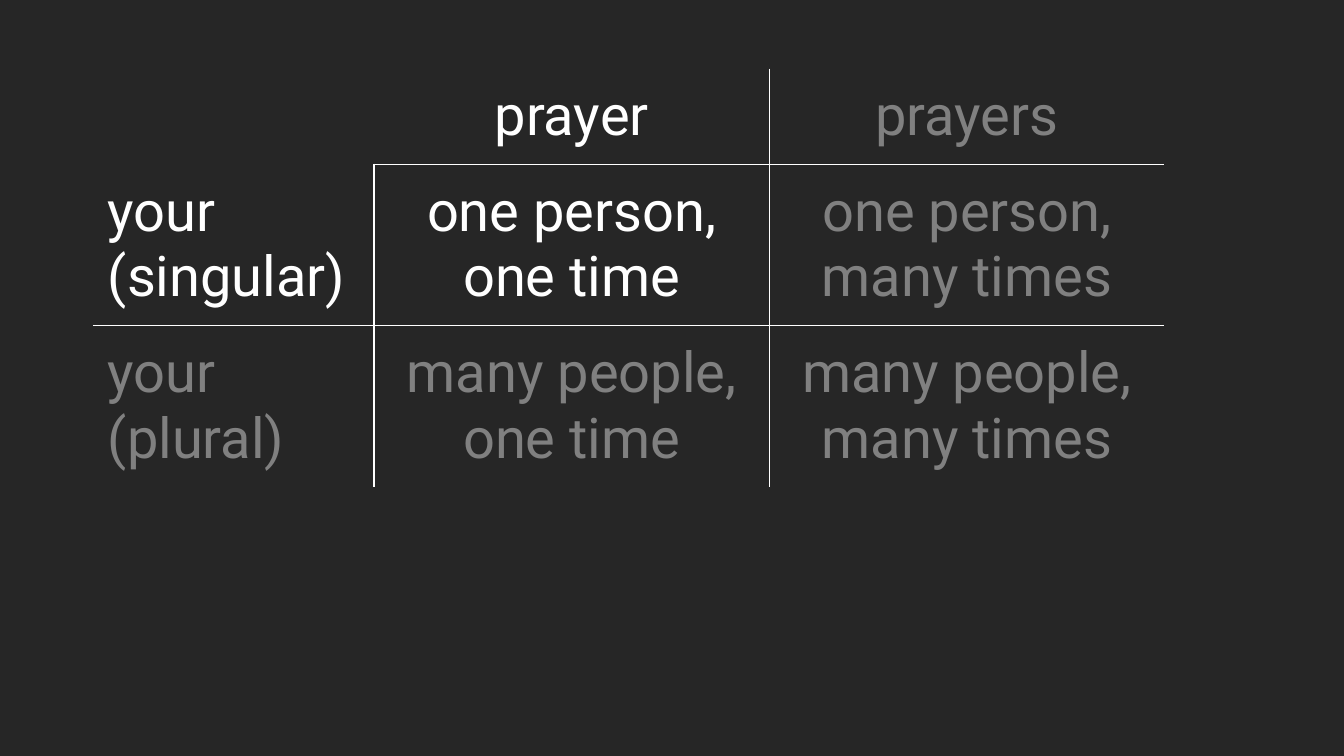
from dataclasses import dataclass

from lxml import etree
from pptx import Presentation
from pptx.dml.color import RGBColor
from pptx.enum.text import MSO_ANCHOR, PP_ALIGN
from pptx.oxml.ns import qn
from pptx.util import Inches, Pt

LEFT, CENTER = PP_ALIGN.LEFT, PP_ALIGN.CENTER
TOP = MSO_ANCHOR.TOP
DARK, WHITE, GRAY = "262626", "FFFFFF", "808080"
WIDTHS = (2.79, 3.92, 3.92)
HEIGHTS = (0.95, 1.6, 1.6)
PAD = Inches(0.15)
# Border tag and the step to the cell on its other side
SIDES = {"a:lnL": (0, -1), "a:lnR": (0, 1), "a:lnT": (-1, 0), "a:lnB": (1, 0)}
CORNER = (0, 0)


@dataclass
class Entry:
    lines: tuple[str, ...] = ()
    color: str = GRAY


GRID = (
    (Entry(), Entry(("prayer",), WHITE), Entry(("prayers",))),
    (Entry(("your", "(singular)"), WHITE),
     Entry(("one person,", "one time"), WHITE),
     Entry(("one person,", "many times"))),
    (Entry(("your", "(plural)")),
     Entry(("many people,", "one time")),
     Entry(("many people,", "many times"))),
)


def rgb(color: str) -> RGBColor:
    return RGBColor.from_string(color)


def write(cell, entry: Entry, align: PP_ALIGN) -> None:
    style = {"margin_left": PAD, "margin_right": PAD, "margin_top": PAD,
             "margin_bottom": PAD, "vertical_anchor": TOP}
    for name, value in style.items():
        setattr(cell, name, value)
    para = cell.text_frame.paragraphs[0]
    para.alignment = align
    for i, line in enumerate(entry.lines):
        if i:
            para.add_line_break()
        run = para.add_run()
        run.text = line
        for name, value in {"name": "Roboto", "size": Pt(40)}.items():
            setattr(run.font, name, value)
        run.font.color.rgb = rgb(entry.color)


def rule(cell, row: int, col: int) -> None:
    """Draw the inner grid lines of a cell, leaving the corner cell open."""
    props = cell._tc.get_or_add_tcPr()
    for i, (tag, (down, right)) in enumerate(SIDES.items()):
        near = (row + down, col + right)
        inside = 0 <= near[0] < len(HEIGHTS) and 0 <= near[1] < len(WIDTHS)
        line = etree.Element(qn(tag), w=str(Pt(1)))
        if inside and CORNER not in (near, (row, col)):
            fill = etree.SubElement(line, qn("a:solidFill"))
            etree.SubElement(fill, qn("a:srgbClr"), val=WHITE)
        else:
            etree.SubElement(line, qn("a:noFill"))
        props.insert(i, line)


def main() -> None:
    deck = Presentation()
    deck.slide_width, deck.slide_height = Inches(13.33), Inches(7.5)
    slide = deck.slides.add_slide(deck.slide_layouts[6])
    back = slide.background.fill
    back.solid()
    back.fore_color.rgb = rgb(DARK)

    table = slide.shapes.add_table(
        len(HEIGHTS), len(WIDTHS), Inches(0.92), Inches(0.68),
        Inches(sum(WIDTHS)), Inches(sum(HEIGHTS))).table
    table.first_row = table.horz_banding = False
    for col, width in zip(table.columns, WIDTHS):
        col.width = Inches(width)
    for row, height in zip(table.rows, HEIGHTS):
        row.height = Inches(height)
    for r, entries in enumerate(GRID):
        for c, entry in enumerate(entries):
            cell = table.cell(r, c)
            cell.fill.background()
            write(cell, entry, CENTER if c else LEFT)
            rule(cell, r, c)
    deck.save("out.pptx")


if __name__ == "__main__":
    main()
